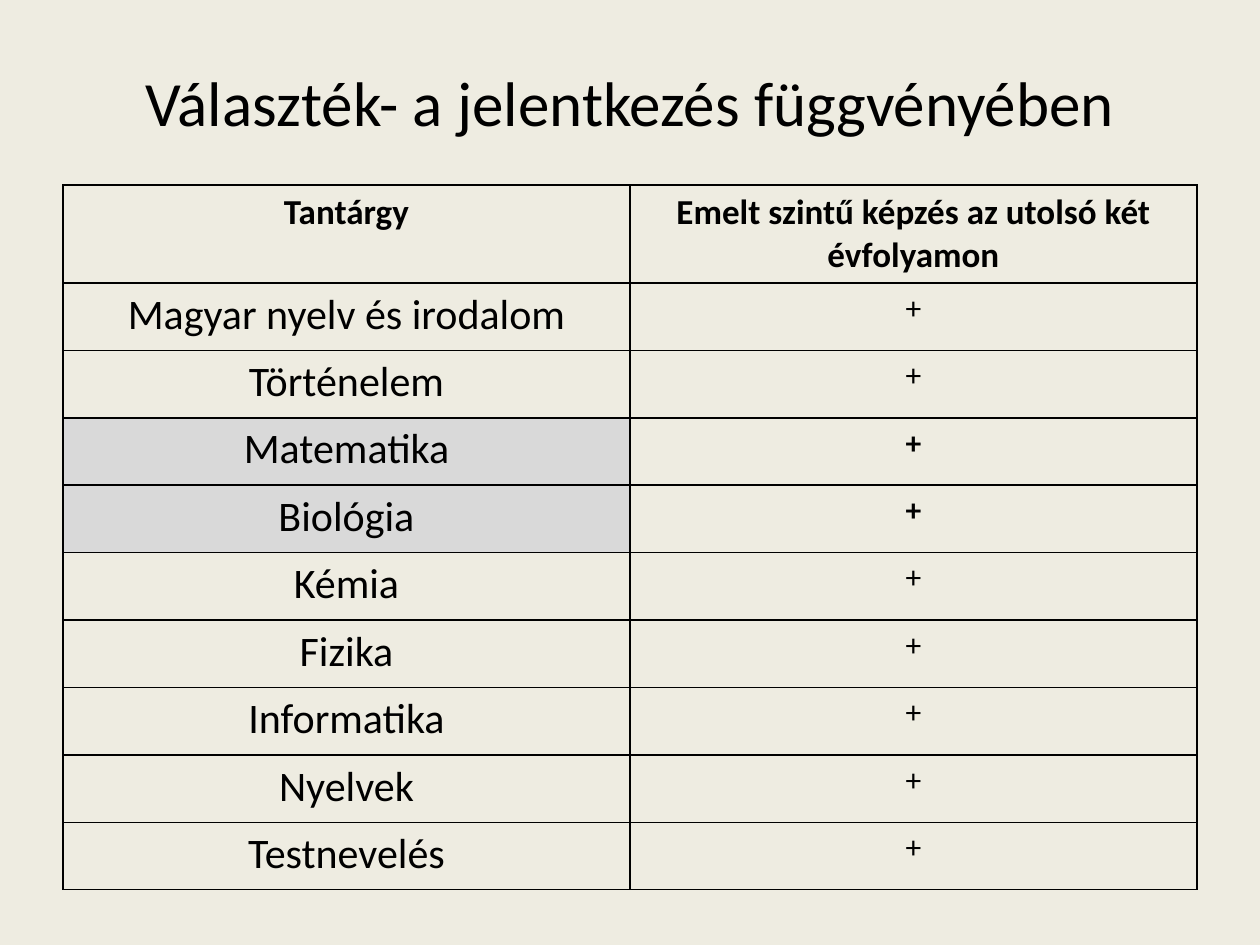
from lxml.etree import SubElement
from pptx import Presentation
from pptx.dml.color import RGBColor
from pptx.enum.text import MSO_ANCHOR, PP_ALIGN
from pptx.oxml.ns import qn
from pptx.util import Inches, Pt

PX = Inches(1) // 126
FONT = "Calibri"
BACKGROUND = RGBColor(0xEE, 0xEC, 0xE1)
BLACK = RGBColor(0x00, 0x00, 0x00)
GREY = RGBColor(0xD9, 0xD9, 0xD9)

LEFT, WIDTH = 63, 1134
HEADER_HEIGHT, BODY_HEIGHT = 98, 607

HEADERS = ["Tantárgy", "Emelt szintű képzés az utolsó két évfolyamon"]
SUBJECTS = [
    "Magyar nyelv és irodalom", "Történelem", "Matematika", "Biológia", "Kémia",
    "Fizika", "Informatika", "Nyelvek", "Testnevelés",
]
HIGHLIGHTED = {"Matematika", "Biológia"}


def px(length):
    return length * PX


def write_text(text_frame, text, size, bold=False):
    paragraph = text_frame.paragraphs[0]
    paragraph.alignment = PP_ALIGN.CENTER
    run = paragraph.add_run()
    run.text = text
    run.font.name = FONT
    run.font.size = Pt(size)
    run.font.bold = bold
    run.font.color.rgb = BLACK


def add_title(slide, text):
    box = slide.shapes.add_textbox(px(LEFT), px(37), px(WIDTH), px(128))
    box.text_frame.word_wrap = True
    box.text_frame.vertical_anchor = MSO_ANCHOR.MIDDLE
    write_text(box.text_frame, text, 36)


def add_borders(cell):
    properties = cell._tc.get_or_add_tcPr()
    for side in ("lnL", "lnR", "lnT", "lnB"):
        line = SubElement(properties, qn(f"a:{side}"), w=str(Pt(1)))
        fill = SubElement(line, qn("a:solidFill"))
        SubElement(fill, qn("a:srgbClr"), val=str(BLACK))


def fill_cell(cell, text, size, bold=False, color=None):
    add_borders(cell)
    if color is None:
        cell.fill.background()
    else:
        cell.fill.solid()
        cell.fill.fore_color.rgb = color
    write_text(cell.text_frame, text, size, bold)


def add_subject_table(slide):
    frame = slide.shapes.add_table(
        len(SUBJECTS) + 1, len(HEADERS),
        px(LEFT), px(185), px(WIDTH), px(HEADER_HEIGHT + BODY_HEIGHT))
    table = frame.table
    table.first_row = False
    table.horz_banding = False

    # Header row
    table.rows[0].height = px(HEADER_HEIGHT)
    for column, header in enumerate(HEADERS):
        fill_cell(table.cell(0, column), header, 20, bold=True)

    # One row per subject, the highlighted ones shaded
    for row, subject in enumerate(SUBJECTS, start=1):
        table.rows[row].height = px(BODY_HEIGHT) // len(SUBJECTS)
        highlighted = subject in HIGHLIGHTED
        fill_cell(table.cell(row, 0), subject, 24,
                  color=GREY if highlighted else None)
        fill_cell(table.cell(row, 1), "+", 18, bold=highlighted)


def main():
    presentation = Presentation()
    presentation.slide_width = px(1260)
    presentation.slide_height = px(945)
    slide = presentation.slides.add_slide(presentation.slide_layouts[6])
    slide.background.fill.solid()
    slide.background.fill.fore_color.rgb = BACKGROUND

    add_title(slide, "Választék- a jelentkezés függvényében")
    add_subject_table(slide)
    presentation.save("out.pptx")


if __name__ == "__main__":
    main()
